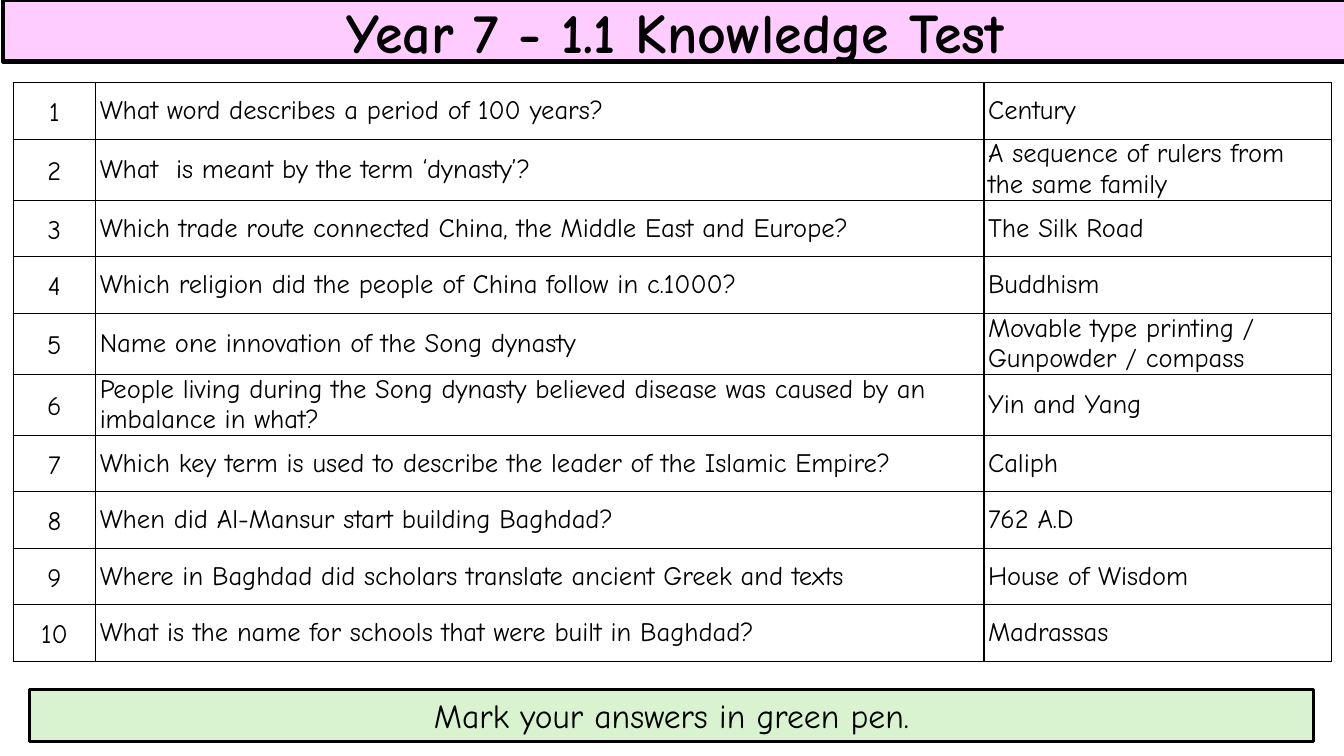
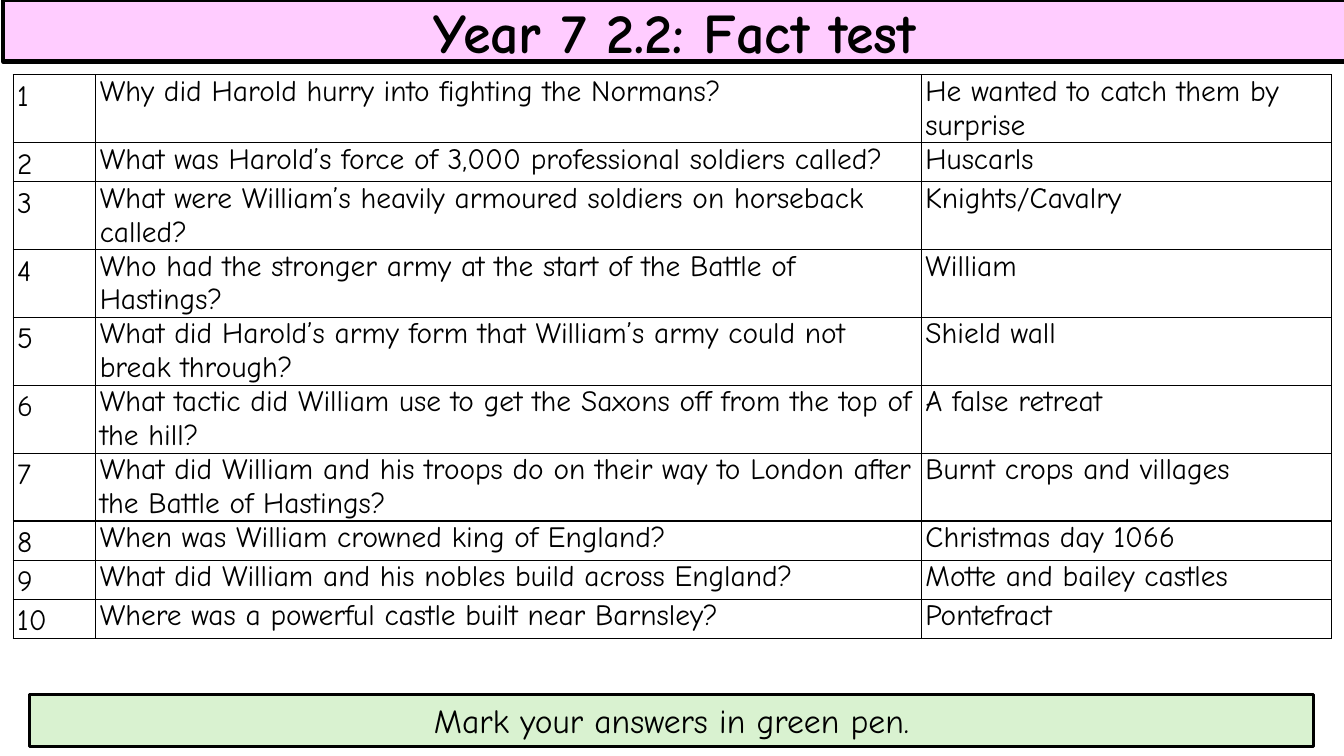
from lxml import etree
from pptx import Presentation
from pptx.dml.color import RGBColor
from pptx.enum.shapes import MSO_SHAPE as Shape
from pptx.enum.text import MSO_ANCHOR as Anchor, PP_ALIGN as Align
from pptx.oxml.ns import qn
from pptx.util import Inches, Pt

FONT = "Comic Neue"
BLACK, WHITE, PINK, GREEN = "000000", "FFFFFF", "FFCCFF", "D9F2D0"
FOOTER = "Mark your answers in green pen."
NUMBER_WIDTH = 0.82

TESTS = [
    {
        "title": "Year 7 - 1.1 Knowledge Test",
        "table_top": 0.82,
        "footer_top": 6.84,
        "widths": (NUMBER_WIDTH, 8.81, 3.45),
        "heights": [0.56] * 10,
        "size": 19,
        "anchor": Anchor.MIDDLE,
        "number_align": Align.CENTER,
        "questions": [
            ("What word describes a period of 100 years?", "Century"),
            ("What  is meant by the term ‘dynasty’?", "A sequence of rulers from the same family"),
            ("Which trade route connected China, the Middle East and Europe?", "The Silk Road"),
            ("Which religion did the people of China follow in c.1000?", "Buddhism"),
            ("Name one innovation of the Song dynasty", "Movable type printing / Gunpowder / compass"),
            ("People living during the Song dynasty believed disease was caused by an imbalance in what?",
             "Yin and Yang"),
            ("Which key term is used to describe the leader of the Islamic Empire?", "Caliph"),
            ("When did Al-Mansur start building Baghdad?", "762 A.D"),
            ("Where in Baghdad did scholars translate ancient Greek and texts", "House of Wisdom"),
            ("What is the name for schools that were built in Baghdad?", "Madrassas"),
        ],
    },
    {
        "title": "Year 7 2.2: Fact test",
        "table_top": 0.74,
        "footer_top": 6.89,
        "widths": (NUMBER_WIDTH, 8.19, 4.07),
        "heights": [0.67, 0.38] + [0.67] * 5 + [0.38] * 3,
        "size": 21,
        "anchor": Anchor.TOP,
        "number_align": Align.LEFT,
        "questions": [
            ("Why did Harold hurry into fighting the Normans?", "He wanted to catch them by surprise"),
            ("What was Harold’s force of 3,000 professional soldiers called?", "Huscarls"),
            ("What were William’s heavily armoured soldiers on horseback called?", "Knights/Cavalry"),
            ("Who had the stronger army at the start of the Battle of Hastings?", "William"),
            ("What did Harold’s army form that William’s army could not break through?", "Shield wall"),
            ("What tactic did William use to get the Saxons off from the top of the hill?", "A false retreat"),
            ("What did William and his troops do on their way to London after the Battle of Hastings?",
             "Burnt crops and villages"),
            ("When was William crowned king of England?", "Christmas day 1066"),
            ("What did William and his nobles build across England?", "Motte and bailey castles"),
            ("Where was a powerful castle built near Barnsley?", "Pontefract"),
        ],
    },
]


def rgb(color):
    return RGBColor.from_string(color)


def paint(target, color):
    target.fill.solid()
    target.fill.fore_color.rgb = rgb(color)


def write(frame, text, size, bold=False, **paragraph_format):
    para = frame.paragraphs[0]
    for name, value in paragraph_format.items():
        setattr(para, name, value)
    span = para.add_run()
    span.text = text
    for name, value in {"name": FONT, "size": Pt(size), "bold": bold}.items():
        setattr(span.font, name, value)
    span.font.color.rgb = rgb(BLACK)


def add_band(page, text, place, color, line_width, size, anchor, bold=False):
    band = page.shapes.add_shape(Shape.RECTANGLE, *map(Inches, place))
    band.shadow.inherit = False
    paint(band, color)
    band.line.color.rgb = rgb(BLACK)
    band.line.width = Pt(line_width)
    band.text_frame.word_wrap = True
    band.text_frame.vertical_anchor = anchor
    write(band.text_frame, text, size, bold, alignment=Align.CENTER)


def add_borders(cell):
    """Draw a thin black line on all four sides; borders must precede the fill."""
    properties = cell._tc.get_or_add_tcPr()
    for index, side in enumerate(("a:lnL", "a:lnR", "a:lnT", "a:lnB")):
        border = etree.Element(qn(side), w=str(Pt(1)))
        fill = etree.SubElement(border, qn("a:solidFill"))
        etree.SubElement(fill, qn("a:srgbClr"), val=BLACK)
        properties.insert(index, border)


def add_questions(page, test):
    rows = [(str(number), *pair) for number, pair in enumerate(test["questions"], 1)]
    widths, heights = test["widths"], test["heights"]
    place = (0.13, test["table_top"], sum(widths), sum(heights))
    table = page.shapes.add_table(len(rows), len(widths), *map(Inches, place)).table
    table.first_row = table.horz_banding = False
    for column, width in zip(table.columns, widths):
        column.width = Inches(width)
    for row, height in zip(table.rows, heights):
        row.height = Inches(height)

    number_format = {"alignment": test["number_align"], "line_spacing": 1.15, "space_after": Pt(10)}
    cell_format = {
        "margin_left": Inches(0.04), "margin_right": Inches(0.04),
        "margin_top": 0, "margin_bottom": 0, "vertical_anchor": test["anchor"],
    }
    for row_index, texts in enumerate(rows):
        for column_index, text in enumerate(texts):
            cell = table.cell(row_index, column_index)
            for name, value in cell_format.items():
                setattr(cell, name, value)
            paint(cell, WHITE)
            add_borders(cell)
            paragraph_format = number_format if column_index == 0 else {}
            write(cell.text_frame, text, test["size"], **paragraph_format)


def main():
    deck = Presentation()
    deck.slide_width, deck.slide_height = Inches(13.33), Inches(7.5)
    for test in TESTS:
        page = deck.slides.add_slide(deck.slide_layouts[6])
        add_questions(page, test)
        add_band(page, test["title"], (0.03, 0, 13.33, 0.61), PINK, 3, 40, Anchor.MIDDLE, bold=True)
        add_band(page, FOOTER, (0.29, test["footer_top"], 12.74, 0.52), GREEN, 2.25, 24, Anchor.TOP)
    deck.save("out.pptx")


if __name__ == "__main__":
    main()
